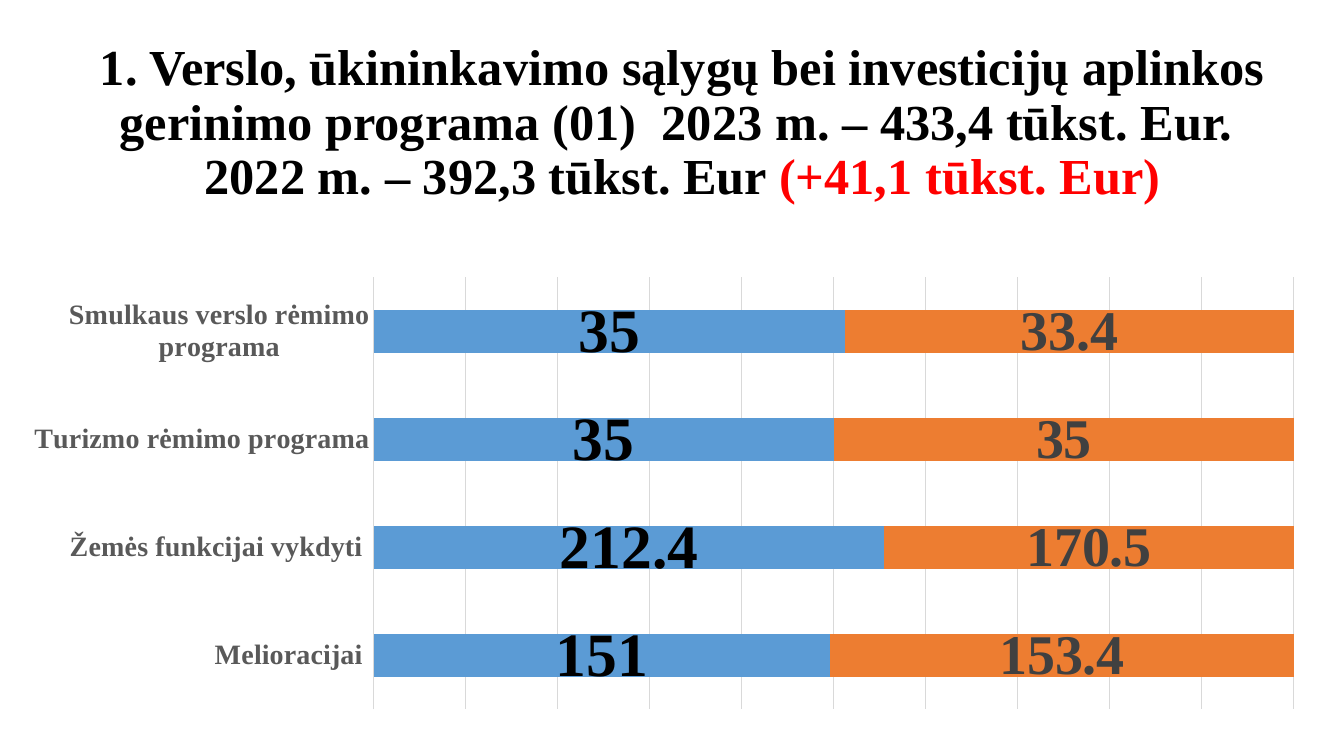
from lxml import etree
from pptx import Presentation
from pptx import util as u
from pptx.chart import data as chart_data
from pptx.dml.color import RGBColor
from pptx.enum import chart as ch
from pptx.enum import text
from pptx.oxml.ns import qn

COLORS = {"ink": "000000", "increase": "FF0000", "grid": "D9D9D9",
          "muted": "595959", "label": "404040", "y2023": "5B9BD5", "y2022": "ED7D31"}
SERIF = "Times New Roman"
PROGRAMMES = ["Melioracijai ", "Žemės funkcijai vykdyti ",
              "Turizmo rėmimo programa", "Smulkaus verslo rėmimo programa"]
BUDGETS = [("2023 m. ", [151, 212.4, 35, 35], "y2023", 44, "ink"),
           ("2022 m.", [153.4, 170.5, 35, 33.4], "y2022", 40, "label")]


def color(name):
    """Return a palette colour."""
    return RGBColor.from_string(COLORS[name])


def style_font(font, size, ink, face=SERIF, bold=True):
    """Apply face, size, weight and colour to a font."""
    font.name, font.size, font.bold = face, u.Pt(size), bold
    font.color.rgb = color(ink)


def style_line(line):
    """Draw a thin grid-coloured line."""
    line.color.rgb = color("grid")
    line.width = u.Pt(0.75)


def place(part, index, fractions, inner=False):
    """Fix a chart part at fractions of the chart area."""
    for old_layout in part.findall(qn("c:layout")):
        part.remove(old_layout)
    layout = etree.Element(qn("c:layout"))
    part.insert(index, layout)
    manual = etree.SubElement(layout, qn("c:manualLayout"))
    settings = [("layoutTarget", "inner")] if inner else []
    settings += [("xMode", "edge"), ("yMode", "edge")]
    settings += zip("xywh", fractions)
    for tag, value in settings:
        etree.SubElement(manual, qn("c:" + tag)).set("val", str(value))


def add_title(slide, left, top, width, height):
    """Write the programme heading with its budget increase."""
    title = slide.shapes.add_textbox(*map(u.Inches, (left, top, width, height)))
    frame = title.text_frame
    frame.word_wrap = True
    frame.vertical_anchor = text.MSO_ANCHOR.MIDDLE
    heading = frame.paragraphs[0]
    heading.text = ("1. Verslo, ūkininkavimo sąlygų bei investicijų aplinkos gerinimo "
                    "programa (01)  2023 m. – 433,4 tūkst. Eur. \v"
                    "2022 m. – 392,3 tūkst. Eur ")
    heading.alignment = text.PP_ALIGN.CENTER
    heading.line_spacing = 0.9
    increase = heading.add_run()
    increase.text = "(+41,1 tūkst. Eur)"
    for run in heading.runs:
        style_font(run.font, 36, "ink")
    increase.font.color.rgb = color("increase")


def add_budget_chart(slide, left, top, width, height):
    """Compare the two years' budgets as full-width stacked bars."""
    budget_data = chart_data.CategoryChartData()
    budget_data.categories = PROGRAMMES
    for year, values, *_ in BUDGETS:
        budget_data.add_series(year, values)
    chart = slide.shapes.add_chart(
        ch.XL_CHART_TYPE.BAR_STACKED_100,
        *map(u.Inches, (left, top, width, height)), budget_data).chart
    style_font(chart.font, 10, "ink", "Calibri", False)
    chart.has_title = False

    bars = chart.plots[0]
    bars.gap_width, bars.overlap, bars.vary_by_categories = 150, 100, False
    for series, (_, _, fill, size, ink) in zip(bars.series, BUDGETS):
        series.format.fill.solid()
        series.format.fill.fore_color.rgb = color(fill)
        labels = series.data_labels
        labels.show_value = True
        labels.position = ch.XL_LABEL_POSITION.CENTER
        style_font(labels.font, size, ink)

    programmes = chart.category_axis
    programmes.major_tick_mark = ch.XL_TICK_MARK.NONE
    style_font(programmes.tick_labels.font, 20, "muted")
    style_line(programmes.format.line)
    shares = chart.value_axis
    shares.visible = False
    shares.has_major_gridlines = True
    style_line(shares.major_gridlines.format.line)

    chart.has_legend = True
    legend = chart.legend
    legend.position = ch.XL_LEGEND_POSITION.TOP
    legend.include_in_layout = False
    style_font(legend.font, 32, "muted", "Calibri", False)
    place(legend._element, 1, (0.51, 0.03, 0.38, 0.1))
    place(chart._chartSpace.chart.plotArea, 0, (0.274, 0.117, 0.713, 0.851), inner=True)


def main():
    """Build the budget slide."""
    deck = Presentation()
    deck.slide_width, deck.slide_height = u.Inches(13.33), u.Inches(7.5)
    slide = deck.slides.add_slide(deck.slide_layouts[6])
    add_title(slide, 0.2, 0.3, 13.14, 1.86)
    add_budget_chart(slide, 0.2, 2.16, 12.8, 5.04)
    deck.save("out.pptx")


if __name__ == "__main__":
    main()
